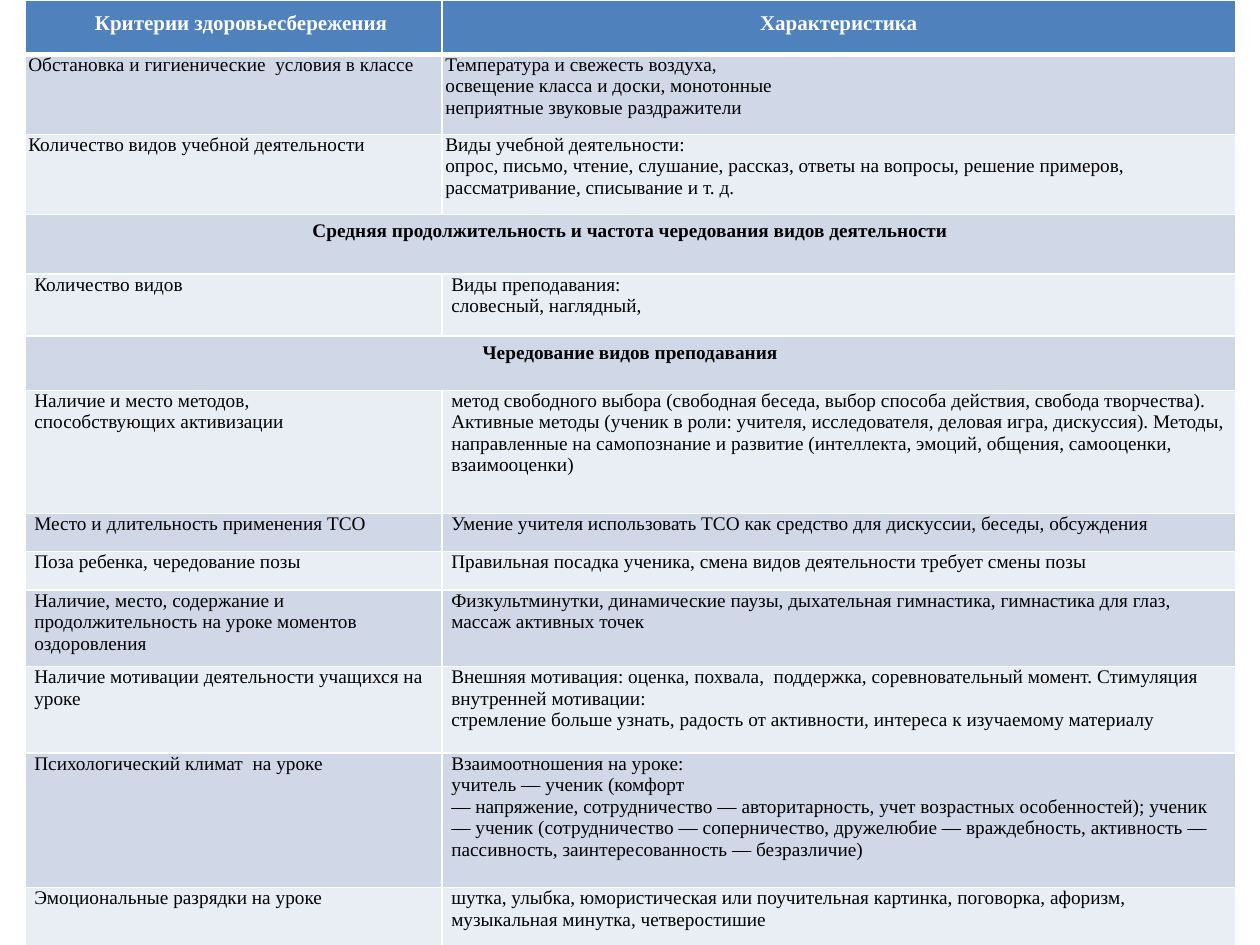
from lxml import etree
from pptx import Presentation
from pptx.dml.color import RGBColor
from pptx.enum.text import PP_ALIGN
from pptx.oxml.ns import qn
from pptx.util import Pt

CENTER, LEFT = PP_ALIGN.CENTER, PP_ALIGN.LEFT
WHITE = RGBColor(0xFF, 0xFF, 0xFF)
BLACK = RGBColor(0, 0, 0)
BLUE = RGBColor(0x4F, 0x81, 0xBD)
DARK = RGBColor(0xD0, 0xD8, 0xE8)
LIGHT = RGBColor(0xE9, 0xED, 0xF4)

COLS = (238.3, 453.6)
# Height in points, then one text per cell; a lone text spans the row.
# "\n" starts a paragraph, "\v" breaks a line.
ROWS = [
    (31, "   Критерии здоровьесбережения", "Характеристика"),
    (45.8, "Обстановка и гигиенические  условия в классе",
     "Температура и свежесть воздуха,\n"
     "освещение класса и доски, монотонные\n"
     "неприятные звуковые раздражители"),
    (45.8, "Количество видов учебной деятельности",
     "Виды учебной деятельности:\n"
     "опрос, письмо, чтение, слушание, рассказ, ответы на вопросы, "
     "решение примеров, рассматривание, списывание и т. д."),
    (34, "Средняя продолжительность и частота чередования видов деятельности"),
    (35.5, "Количество видов", "Виды преподавания:\nсловесный, наглядный,"),
    (31, "Чередование видов преподавания"),
    (70.4, "Наличие и место методов,\nспособствующих активизации",
     "метод свободного выбора (свободная беседа, выбор способа действия, "
     "свобода творчества).\n"
     "Активные методы (ученик в роли: учителя, исследователя, деловая игра, "
     "дискуссия). Методы, направленные на самопознание и развитие "
     "(интеллекта, эмоций, общения, самооценки, взаимооценки)"),
    (21.9, "Место и длительность применения ТСО",
     "Умение учителя использовать ТСО как средство для дискуссии, беседы, "
     "обсуждения"),
    (21.9, "Поза ребенка, чередование позы",
     "Правильная посадка ученика, смена видов деятельности требует смены позы"),
    (43.8, "Наличие, место, содержание и\n"
     "продолжительность на уроке моментов\nоздоровления",
     "Физкультминутки, динамические паузы, дыхательная гимнастика, "
     "гимнастика для глаз, массаж активных точек"),
    (49.4, "Наличие мотивации деятельности учащихся на\nуроке",
     "Внешняя мотивация: оценка, похвала,  поддержка, соревновательный "
     "момент. Стимуляция внутренней мотивации: \v"
     "стремление больше узнать, радость от активности, интереса к "
     "изучаемому материалу"),
    (76.8, "Психологический климат  на уроке",
     "Взаимоотношения на уроке:\n"
     "учитель — ученик (комфорт\v"
     "— напряжение, сотрудничество — авторитарность, учет возрастных "
     "особенностей); ученик — ученик (сотрудничество — соперничество, "
     "дружелюбие — враждебность, активность — пассивность, "
     "заинтересованность — безразличие)"),
    (35.3, "Эмоциональные разрядки на уроке",
     "шутка, улыбка, юмористическая или поучительная картинка, поговорка, "
     "афоризм, музыкальная минутка, четверостишие"),
]


def write(frame, text, size=11, color=BLACK, bold=False, align=LEFT,
          space=None, face="Times New Roman"):
    frame.text = text
    for para in frame.paragraphs:
        para.alignment = align
        para.line_spacing = space
        for run in para.runs:
            font = run.font
            font.name, font.size, font.bold = face, Pt(size), bold
            font.color.rgb = color
        for br in para._p.findall(qn("a:br")):
            etree.SubElement(br, qn("a:rPr")).set("sz", str(size * 100))


def edge(cell, top=1, bottom=1):
    """Draw white borders, with widths in points."""
    props = cell._tc.get_or_add_tcPr()
    sides = {"L": 1, "R": 1, "T": top, "B": bottom}
    for i, (side, width) in enumerate(sides.items()):
        line = etree.Element(qn("a:ln" + side), w=str(Pt(width)))
        fill = etree.SubElement(line, qn("a:solidFill"))
        etree.SubElement(fill, qn("a:srgbClr")).set("val", str(WHITE))
        props.insert(i, line)


class Deck:
    def __init__(self, width, height):
        self.prs = Presentation()
        self.prs.slide_width, self.prs.slide_height = Pt(width), Pt(height)
        self.slide = self.prs.slides.add_slide(self.prs.slide_layouts[6])

    def table(self, left, top, cols, rows):
        high = sum(row[0] for row in rows)
        grid = self.slide.shapes.add_table(
            len(rows), len(cols), Pt(left), Pt(top),
            Pt(sum(cols)), Pt(high)).table
        for col, width in zip(grid.columns, cols):
            col.width = Pt(width)
        for r, (height, *texts) in enumerate(rows):
            grid.rows[r].height = Pt(height)
            self.row(grid, r, texts)

    def row(self, grid, r, texts):
        head, wide = r == 0, len(texts) == 1
        cells = list(grid.rows[r].cells)
        for cell in cells:
            cell.fill.solid()
            cell.fill.fore_color.rgb = BLUE if head else DARK if r % 2 else LIGHT
            edge(cell, top=3 if r == 1 else 1, bottom=3 if head else 1)
        if wide:
            cells[0].merge(cells[-1])
        for cell, text in zip(cells, texts):
            if not wide:
                cell.margin_left = cell.margin_right = Pt(2 if r < 3 else 5.4)
                cell.margin_top = cell.margin_bottom = 0
            if head:
                write(cell.text_frame, text, size=12, color=WHITE, bold=True,
                      align=CENTER, space=1.5)
            else:
                write(cell.text_frame, text, bold=wide,
                      align=CENTER if wide else LEFT)

    def save(self):
        self.prs.save("out.pptx")


def main():
    deck = Deck(720, 540)
    deck.table(14.2, 0, COLS, ROWS)
    deck.save()


if __name__ == "__main__":
    main()
